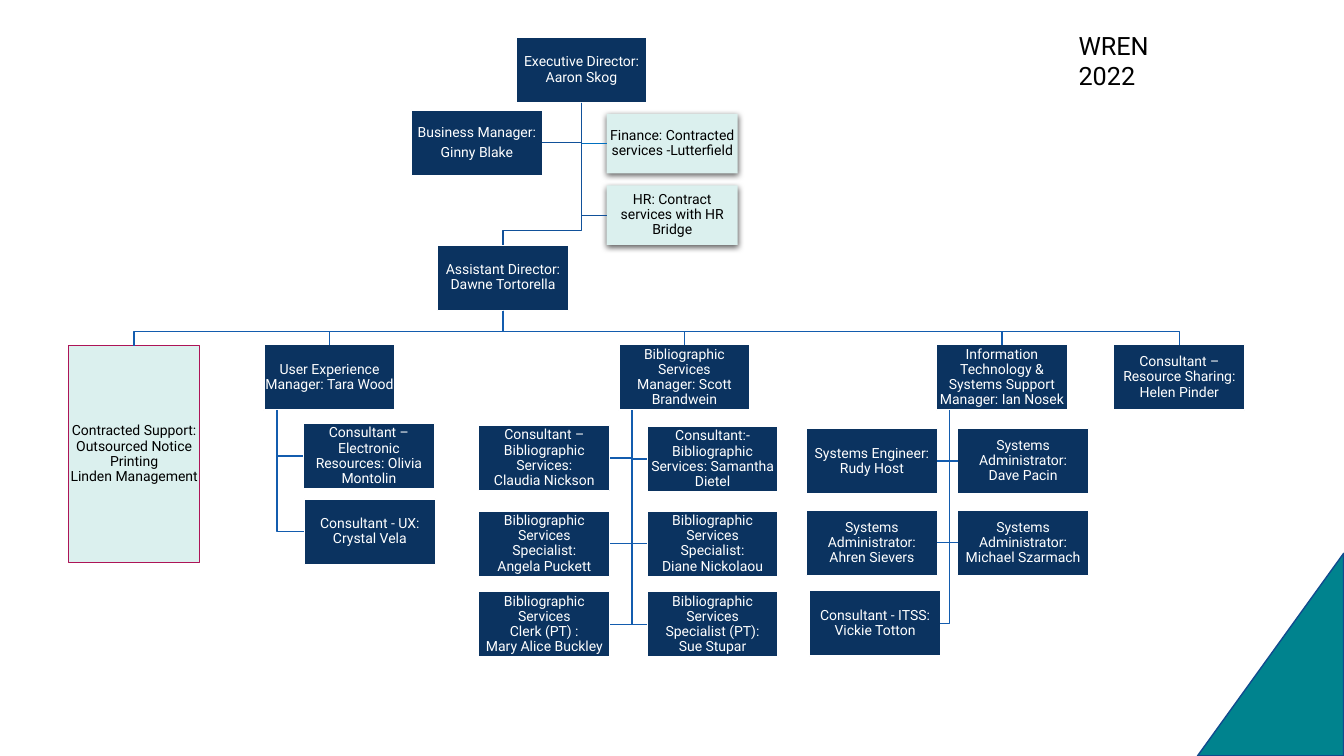
import dataclasses

import lxml.etree
import pptx
import pptx.dml.color
import pptx.enum.shapes
import pptx.enum.text
import pptx.oxml.ns
import pptx.util

Pt = pptx.util.Pt


@dataclasses.dataclass(frozen=True)
class Theme:
    font: str = "Roboto"
    title_size: float = 18
    label_size: float = 10
    navy: str = "0B3360"
    mint: str = "DBF0EE"
    teal: str = "00838E"
    teal_edge: str = "104B8E"
    magenta: str = "AD1457"
    white: str = "FFFFFF"
    black: str = "000000"
    upper_link: str = "11519A"
    finance_link: str = "0070C0"
    lower_link: str = "135CAE"
    box_width: float = 93.6
    box_height: float = 46.8


class OrgChart:
    """Draws an organisation chart on one slide, with lengths in points."""

    def __init__(self, page, theme):
        self.page = page
        self.theme = theme

    def color(self, value):
        return pptx.dml.color.RGBColor.from_string(value)

    def outline(self, shape, color, width):
        shape.line.color.rgb = self.color(color)
        shape.line.width = Pt(width)

    def add_text(self, para, text, size, color):
        for index, line in enumerate(text.split("\n")):
            if index:
                para.add_line_break()
            span = para.add_run()
            span.text = line
            span.font.name = self.theme.font
            span.font.size = Pt(size)
            span.font.color.rgb = self.color(color)

    def title(self, text, left, top, width, height):
        box = self.page.shapes.title
        box.left, box.top, box.width, box.height = map(Pt, (left, top, width, height))
        frame = box.text_frame
        frame.word_wrap = True
        frame.auto_size = pptx.enum.text.MSO_AUTO_SIZE.NONE
        frame.vertical_anchor = pptx.enum.text.MSO_ANCHOR.TOP
        para = frame.paragraphs[0]
        para.alignment = pptx.enum.text.PP_ALIGN.LEFT
        self.add_text(para, text, self.theme.title_size, self.theme.black)

    def shape(self, kind, left, top, width, height, fill):
        shape = self.page.shapes.add_shape(kind, Pt(left), Pt(top), Pt(width), Pt(height))
        shape.shadow.inherit = False
        shape.fill.solid()
        shape.fill.fore_color.rgb = self.color(fill)
        return shape

    def corner(self, left, top, width, height):
        kind = pptx.enum.shapes.MSO_SHAPE.RIGHT_TRIANGLE
        triangle = self.shape(kind, left, top, width, height, self.theme.teal)
        triangle.rotation = 270
        self.outline(triangle, self.theme.teal_edge, 1)

    def box(self, paragraphs, left, top, height, fill, color):
        kind = pptx.enum.shapes.MSO_SHAPE.RECTANGLE
        box = self.shape(kind, left, top, self.theme.box_width, height, fill)
        frame = box.text_frame
        frame.word_wrap = True
        frame.vertical_anchor = pptx.enum.text.MSO_ANCHOR.MIDDLE
        frame.margin_left = frame.margin_right = Pt(0.7)
        frame.margin_top = frame.margin_bottom = Pt(0.7)
        for index, text in enumerate(paragraphs):
            para = frame.add_paragraph() if index else frame.paragraphs[0]
            para.alignment = pptx.enum.text.PP_ALIGN.CENTER
            para.line_spacing = 0.9
            para.space_before = Pt(0)
            para.space_after = Pt(3.5)
            self.add_text(para, text, self.theme.label_size, color)
        return box

    def staff(self, left, top, *paragraphs):
        theme = self.theme
        box = self.box(paragraphs, left, top, theme.box_height, theme.navy, theme.white)
        self.outline(box, theme.white, 1)
        return box

    def contractor(self, left, top, height, text):
        return self.box([text], left, top, height, self.theme.mint, self.theme.black)

    def shadowed(self, box):
        box.line.fill.background()
        name = pptx.oxml.ns.qn
        effects = box._element.spPr.find(name("a:effectLst"))
        shadow = lxml.etree.SubElement(effects, name("a:outerShdw"), blurRad=str(Pt(4.5)),
                                       dist=str(Pt(1.5)), dir="5400000", algn="t", rotWithShape="0")
        tint = lxml.etree.SubElement(shadow, name("a:srgbClr"), val=self.theme.black)
        lxml.etree.SubElement(tint, name("a:alpha"), val="63000")

    def link(self, points, color, width=1):
        builder = self.page.shapes.build_freeform(*points[0])
        builder.add_line_segments(points[1:], close=False)
        line = builder.convert_to_shape()
        line.shadow.inherit = False
        line.fill.background()
        self.outline(line, color, width)

    def drop(self, parent, child, level, color):
        start = parent.left + parent.width // 2
        end = child.left + child.width // 2
        bottom = parent.top + parent.height
        self.link([(start, bottom), (start, Pt(level)), (end, Pt(level)), (end, child.top)], color)

    def hang(self, parent, trunk, child, color, width=1):
        trunk = Pt(trunk)
        middle = child.top + child.height // 2
        side = child.left if child.left > trunk else child.left + child.width
        self.link([(trunk, parent.top + parent.height), (trunk, middle), (side, middle)], color, width)


def main():
    deck = pptx.Presentation()
    deck.slide_width, deck.slide_height = Pt(960), Pt(540)
    theme = Theme()
    chart = OrgChart(deck.slides.add_slide(deck.slide_layouts[5]), theme)
    chart.corner(835.2, 415.4, 144.7, 104.4)
    chart.title("WREN 2022", 763.2, 18, 101.5, 50)

    executive = chart.staff(368.6, 26.6, "Executive Director: Aaron Skog")
    assistant = chart.staff(312.5, 175, "Assistant Director: Dawne Tortorella")
    business = chart.staff(293.8, 78.5, "Business Manager:", "Ginny Blake")
    finance = chart.contractor(433.4, 81.4, 42.5, "Finance: Contracted services -Lutterfield")
    personnel = chart.contractor(433.4, 132.5, 42.5, "HR: Contract services with HR Bridge")
    for box in (finance, personnel):
        chart.shadowed(box)
    trunk = 415.4
    chart.hang(executive, trunk, personnel, theme.upper_link)
    chart.hang(executive, trunk, finance, theme.finance_link, 0.75)
    chart.hang(executive, trunk, business, theme.upper_link)
    chart.drop(executive, assistant, 164.9, theme.upper_link)

    support = chart.contractor(
        49, 247, 154.8, "Contracted Support: Outsourced Notice Printing\nLinden Management")
    chart.outline(support, theme.magenta, 0.5)
    sharing = chart.staff(795.6, 246.2, "Consultant – Resource Sharing: Helen Pinder")
    for box in (support, sharing):
        chart.drop(assistant, box, 236.9, theme.lower_link)

    teams = [
        (188.6, "User Experience Manager: Tara Wood", 198, [
            (216.7, 302.4, "Consultant – Electronic Resources: Olivia Montolin"),
            (217.4, 356.4, "Consultant - UX: Crystal Vela"),
        ]),
        (442.1, "Bibliographic Services\nManager: Scott Brandwein", 451.4, [
            (342, 303.8, "Consultant – Bibliographic Services:\nClaudia Nickson"),
            (462.2, 304.5, "Consultant:- Bibliographic Services: Samantha Dietel"),
            (342, 365, "Bibliographic Services\nSpecialist:\nAngela Puckett"),
            (462.2, 365, "Bibliographic Services\nSpecialist:\nDiane Nickolaou"),
            (342, 422.6, "Bibliographic Services\nClerk (PT) :\nMary Alice Buckley"),
            (462.2, 422.6, "Bibliographic Services\nSpecialist (PT):\nSue Stupar"),
        ]),
        (668.9, "Information Technology & Systems Support Manager: Ian Nosek", 678.2, [
            (576, 306, "Systems Engineer:\nRudy Host"),
            (684, 306, "Systems Administrator:\nDave Pacin"),
            (576, 364.3, "Systems Administrator:\nAhren Sievers"),
            (684, 364.3, "Systems Administrator:\nMichael Szarmach"),
            (578.2, 421.9, "Consultant - ITSS:\nVickie Totton"),
        ]),
    ]
    for left, label, trunk, reports in teams:
        manager = chart.staff(left, 246.2, label)
        chart.drop(assistant, manager, 236.9, theme.lower_link)
        for report in reports:
            chart.hang(manager, trunk, chart.staff(*report), theme.lower_link)

    deck.save("out.pptx")


if __name__ == "__main__":
    main()
